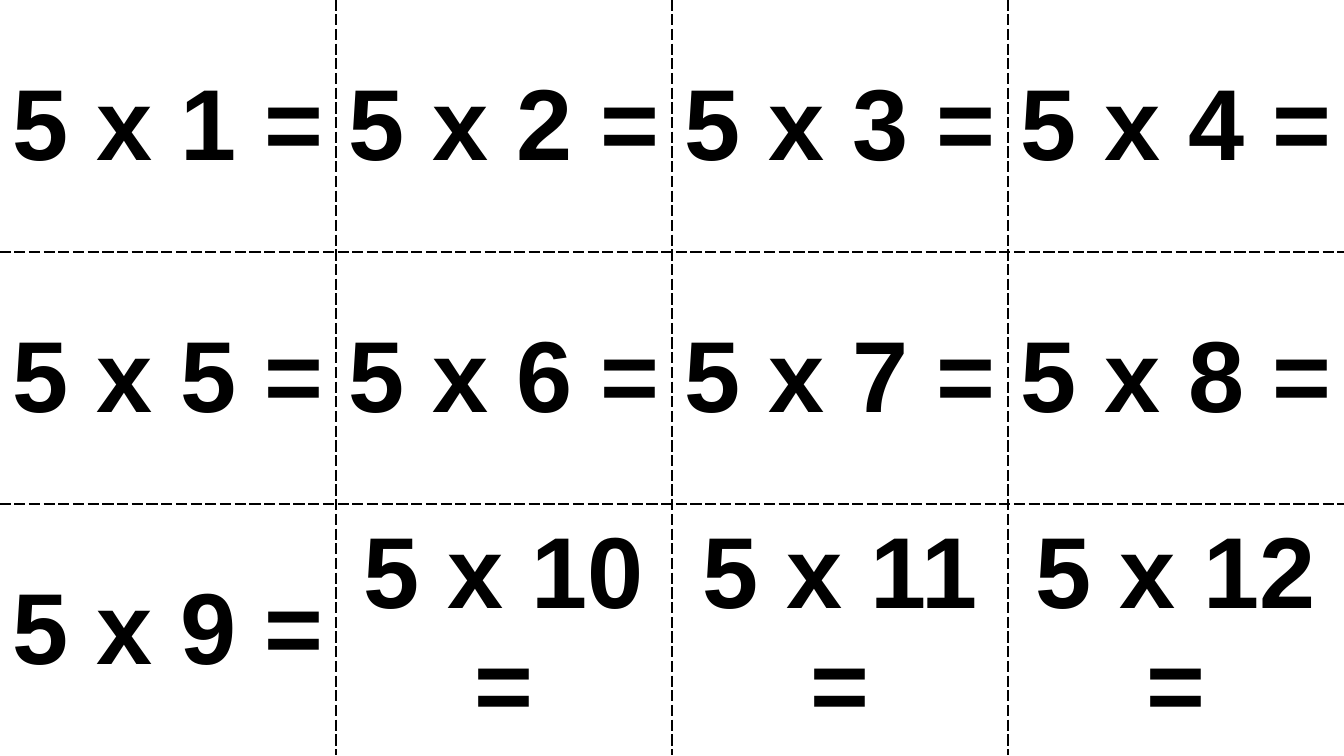
from lxml import etree
from pptx import Presentation
from pptx.dml.color import RGBColor
from pptx.enum.text import MSO_ANCHOR as Anchor, PP_ALIGN as Align
from pptx.oxml.ns import qn
from pptx.util import Inches, Pt

BLACK = RGBColor(0, 0, 0)
WHITE = RGBColor(255, 255, 255)
WIDTH, HEIGHT = 13.33, 7.5
ROWS, COLUMNS = 3, 4
FACTOR = 5


def add_border(cell, side, is_outer):
    properties = cell._tc.get_or_add_tcPr()
    line = etree.SubElement(properties, qn(f"a:ln{side}"), w=str(Pt(1)))
    fill = etree.SubElement(line, qn("a:solidFill"))
    color = WHITE if is_outer else BLACK
    etree.SubElement(fill, qn("a:srgbClr"), val=str(color))
    etree.SubElement(line, qn("a:prstDash"), val="solid" if is_outer else "dash")


def fill_card(cell, text, outer_sides):
    for side in "LRTB":
        add_border(cell, side, outer_sides[side])
    cell.fill.solid()
    cell.fill.fore_color.rgb = WHITE
    cell.vertical_anchor = Anchor.MIDDLE
    cell.text = text
    para = cell.text_frame.paragraphs[0]
    para.alignment = Align.CENTER
    para.font.name = "Arial"
    para.font.size = Pt(72)
    para.font.bold = True
    para.font.color.rgb = BLACK


def add_flash_cards(page, left, top, width, height):
    frame = page.shapes.add_table(
        ROWS, COLUMNS, Inches(left), Inches(top), Inches(width), Inches(height)
    )
    cards = frame.table
    cards.first_row = False
    cards.horz_banding = False
    for row in range(ROWS):
        for column in range(COLUMNS):
            number = row * COLUMNS + column + 1
            outer_sides = {
                "L": column == 0,
                "R": column == COLUMNS - 1,
                "T": row == 0,
                "B": row == ROWS - 1,
            }
            fill_card(cards.cell(row, column), f"{FACTOR} x {number} =", outer_sides)


def main():
    deck = Presentation()
    deck.slide_width = Inches(WIDTH)
    deck.slide_height = Inches(HEIGHT)
    page = deck.slides.add_slide(deck.slide_layouts[6])
    add_flash_cards(page, 0, 0, WIDTH, HEIGHT)
    deck.save("out.pptx")


if __name__ == "__main__":
    main()
